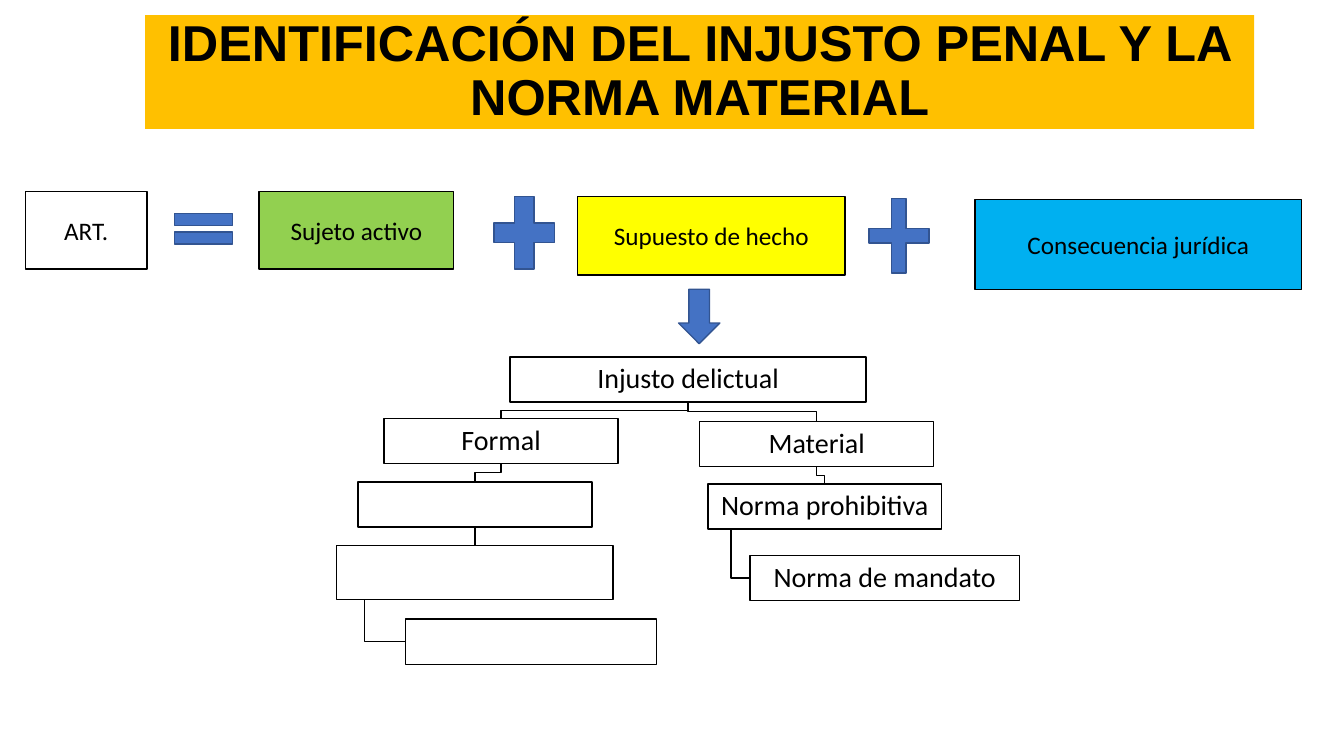
from lxml import etree
from pptx import Presentation
from pptx import util as u
from pptx.dml.color import RGBColor
from pptx.enum import shapes, text
from pptx.oxml.ns import qn

BLACK = RGBColor(0x00, 0x00, 0x00)
WHITE = RGBColor(0xFF, 0xFF, 0xFF)
GOLD = RGBColor(0xFF, 0xC0, 0x00)
GREEN = RGBColor(0x92, 0xD0, 0x50)
YELLOW = RGBColor(0xFF, 0xFF, 0x00)
SKY = RGBColor(0x00, 0xB0, 0xF0)
BLUE = RGBColor(0x44, 0x72, 0xC4)
NAVY = RGBColor(0x32, 0x54, 0x91)
SHAPE = shapes.MSO_SHAPE


class Diagram:
    """Holds the slide and the style of its elements."""

    font, heading_font = "Calibri", "Arial"
    line_width = u.Pt(1)

    def __init__(self, prs):
        self.s = prs.slides.add_slide(prs.slide_layouts[5])

    def label(self, sp, words, size, font=font, bold=False, spacing=1.0):
        tf = sp.text_frame
        tf.word_wrap = True
        tf.auto_size = text.MSO_AUTO_SIZE.NONE
        tf.vertical_anchor = text.MSO_ANCHOR.MIDDLE
        p = tf.paragraphs[0]
        p.alignment = text.PP_ALIGN.CENTER
        p.line_spacing = spacing
        r = p.add_run()
        r.text = words
        r.font.name, r.font.size, r.font.bold = font, u.Pt(size), bold
        r.font.color.rgb = BLACK
        return tf

    def outline(self, sp, color=BLACK):
        sp.line.color.rgb = color
        sp.line.width = self.line_width

    def title(self, words, box):
        sp = self.s.shapes.title
        sp.left, sp.top, sp.width, sp.height = map(u.Inches, box)
        sp.fill.solid()
        sp.fill.fore_color.rgb = GOLD
        self.label(sp, words, 36, self.heading_font, True, 0.9)

    def shape(self, kind, box, fill, line=BLACK):
        sp = self.s.shapes.add_shape(kind, *map(u.Inches, box))
        sp.shadow.inherit = False
        sp.fill.solid()
        sp.fill.fore_color.rgb = fill
        self.outline(sp, line)
        return sp

    def term(self, words, box, fill):
        self.label(self.shape(SHAPE.RECTANGLE, box, fill), words, 18)

    def symbol(self, kind, box, thickness=None):
        sp = self.shape(kind, box, BLUE, NAVY)
        if thickness:
            sp.adjustments[0] = thickness

    def node(self, words, box):
        sp = self.shape(SHAPE.RECTANGLE, box, WHITE)
        if words:
            tf = self.label(sp, words, 20, spacing=0.9)
            tf.margin_left = tf.margin_right = u.Inches(0.01)
            tf.margin_top = tf.margin_bottom = u.Inches(0.01)

    def straight(self, start, end):
        sp = self.s.shapes.add_connector(
            shapes.MSO_CONNECTOR.STRAIGHT, *map(u.Inches, start + end))
        self.outline(sp)
        etree.SubElement(sp._element.spPr, qn("a:effectLst"))

    def bent(self, points):
        start, *rest = [(u.Inches(x), u.Inches(y)) for x, y in points]
        builder = self.s.shapes.build_freeform(*start)
        builder.add_line_segments(rest, close=False)
        sp = builder.convert_to_shape()
        sp.shadow.inherit = False
        sp.fill.background()
        self.outline(sp)

    def link(self, parent, child, hanging):
        px, py, pw, ph = parent
        cx, cy, cw, ch = child
        bottom = py + ph
        if hanging:  # down from a tenth of the parent, then into the child's side
            x, y = px + pw / 10, cy + ch / 2
            self.bent([(x, bottom), (x, y), (cx, y)])
            return
        x1, x2, middle = px + pw / 2, cx + cw / 2, (bottom + cy) / 2
        if abs(x1 - x2) < 0.01:
            self.straight((x1, bottom), (x2, cy))
        else:
            self.bent([(x1, bottom), (x1, middle), (x2, middle), (x2, cy)])


def main():
    prs = Presentation()
    prs.slide_width, prs.slide_height = u.Inches(13.33), u.Inches(7.5)
    d = Diagram(prs)
    d.title("IDENTIFICACIÓN DEL INJUSTO PENAL Y LA NORMA MATERIAL",
            (1.44, 0.15, 11, 1.13))

    # Formula: terms and the signs between them
    for words, box, fill in [
        ("ART.", (0.25, 1.9, 1.21, 0.77), WHITE),
        ("Sujeto activo", (2.57, 1.9, 1.93, 0.77), GREEN),
        ("Supuesto de hecho", (5.73, 1.95, 2.65, 0.78), YELLOW),
        ("Consecuencia jurídica", (9.67, 1.98, 3.24, 0.89), SKY),
    ]:
        d.term(words, box, fill)
    d.symbol(SHAPE.MATH_EQUAL, (1.63, 2.01, 0.78, 0.52))
    d.symbol(SHAPE.MATH_PLUS, (4.79, 1.82, 0.82, 0.98))
    d.symbol(SHAPE.MATH_PLUS, (8.51, 1.84, 0.81, 1), 0.18)
    d.symbol(SHAPE.DOWN_ARROW, (6.73, 2.87, 0.41, 0.54))

    # Tree: key -> (words, box, parent key, hanging from the side)
    tree = {
        "root": ("Injusto delictual", (5.06, 3.54, 3.53, 0.45), None, False),
        "formal": ("Formal", (3.81, 4.15, 2.32, 0.45), "root", False),
        "formal 1": ("", (3.55, 4.78, 2.32, 0.45), "formal", False),
        "formal 2": ("", (3.34, 5.41, 2.74, 0.54), "formal 1", False),
        "formal 3": ("", (4.02, 6.14, 2.49, 0.45), "formal 2", True),
        "material": ("Material", (6.94, 4.18, 2.32, 0.45), "root", False),
        "ban": ("Norma prohibitiva", (7.02, 4.8, 2.32, 0.45), "material", False),
        "mandate": ("Norma de mandato", (7.44, 5.51, 2.67, 0.45), "ban", True),
    }
    for _, box, parent, hanging in tree.values():
        if parent:
            d.link(tree[parent][1], box, hanging)
    for words, box, _, _ in tree.values():
        d.node(words, box)

    prs.save("out.pptx")


if __name__ == "__main__":
    main()
